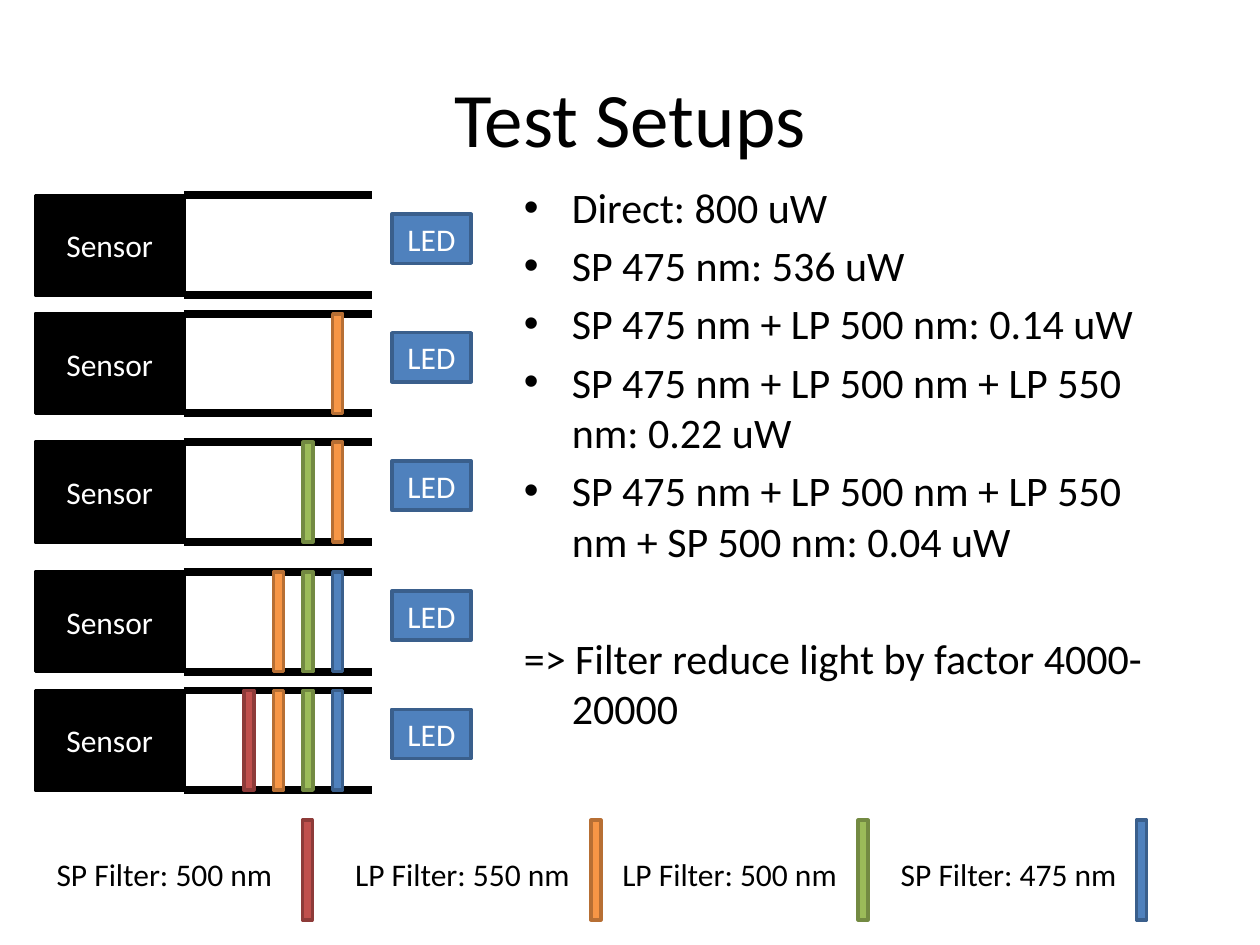
import lxml.etree
import pptx
import pptx.dml.color
import pptx.enum.shapes
import pptx.enum.text
import pptx.oxml.ns
import pptx.util

Inches = pptx.util.Inches
Pt = pptx.util.Pt
ALIGN = pptx.enum.text.PP_ALIGN
ANCHOR = pptx.enum.text.MSO_ANCHOR

TITLE = "Test Setups"
RESULTS = [
    "Direct: 800 uW",
    "SP 475 nm: 536 uW",
    "SP 475 nm + LP 500 nm: 0.14 uW",
    "SP 475 nm + LP 500 nm + LP 550 nm: 0.22 uW",
    "SP 475 nm + LP 500 nm + LP 550 nm + SP 500 nm: 0.04 uW",
]
CONCLUSION = "=> Filter reduce light by factor 4000-20000"

# Top of each setup, and its filters from the LED towards the sensor
SETUPS = [
    (1.55, []),
    (2.49, ["orange"]),
    (3.51, ["orange", "green"]),
    (4.54, ["blue", "green", "orange"]),
    (5.48, ["blue", "green", "orange", "red"]),
]
# Label, label left, filter left, filter colour
LEGEND = [
    ("SP Filter: 500 nm", 0.35, 2.4, "red"),
    ("LP Filter: 550 nm", 2.72, 4.69, "orange"),
    ("LP Filter: 500 nm", 4.84, 6.81, "green"),
    ("SP Filter: 475 nm", 7.05, 9.02, "blue"),
]

THEME = {
    "font": "Calibri",
    "title": 44,
    "body": 24,
    "label": 18,
    "text": "000000",
    "inverse": "FFFFFF",
    # Fill and outline
    "black": ("000000", "000000"),
    "blue": ("4F81BD", "3A5F8C"),
    "orange": ("F79646", "B76F34"),
    "green": ("9BBB59", "738A42"),
    "red": ("C0504D", "8E3B39"),
}

SENSOR_LEFT, SENSOR_WIDTH = 0.28, 1.18
TUBE_LEFT, TUBE_RIGHT, TUBE_HEIGHT = 1.46, 2.95, 0.79
LED_LEFT, LED_WIDTH, LED_HEIGHT, LED_DROP = 3.11, 0.63, 0.39, 0.15
FILTER_LEFT, FILTER_WIDTH, FILTER_STEP = 2.64, 0.08, 0.235
LEGEND_FILTER_TOP, LEGEND_LABEL_TOP = 6.51, 6.74
INDENT = 0.38


def rgb(value):
    return pptx.dml.color.RGBColor.from_string(value)


def write(frame, texts, size=THEME["label"], color=THEME["text"],
          align=ALIGN.LEFT, anchor=ANCHOR.TOP):
    """Fill a text frame with one paragraph per text and return the paragraphs."""
    frame.word_wrap = True
    frame.vertical_anchor = anchor
    paras = []
    for index, text in enumerate(texts):
        para = frame.add_paragraph() if index else frame.paragraphs[0]
        para.alignment = align
        span = para.add_run()
        span.text = text
        span.font.name = THEME["font"]
        span.font.size = Pt(size)
        span.font.color.rgb = rgb(color)
        paras.append(para)
    return paras


def add_text(page, texts, left, top, width, height, **text_format):
    box = page.shapes.add_textbox(*map(Inches, (left, top, width, height)))
    return write(box.text_frame, texts, **text_format)


def add_block(page, left, top, width, height, color, label=None):
    block = page.shapes.add_shape(
        pptx.enum.shapes.MSO_SHAPE.RECTANGLE, *map(Inches, (left, top, width, height)))
    fill, outline = THEME[color]
    block.shadow.inherit = False
    block.fill.solid()
    block.fill.fore_color.rgb = rgb(fill)
    block.line.color.rgb = rgb(outline)
    block.line.width = Pt(2)
    if label:
        write(block.text_frame, [label], color=THEME["inverse"],
              align=ALIGN.CENTER, anchor=ANCHOR.MIDDLE)


def add_wall(page, top):
    wall = page.shapes.add_connector(
        pptx.enum.shapes.MSO_CONNECTOR.STRAIGHT,
        *map(Inches, (TUBE_LEFT, top, TUBE_RIGHT, top)))
    wall.line.color.rgb = rgb(THEME["black"][0])
    wall.line.width = Pt(4.5)
    lxml.etree.SubElement(wall.element.spPr, pptx.oxml.ns.qn("a:effectLst"))


def add_filter(page, left, top, color):
    add_block(page, left, top, FILTER_WIDTH, TUBE_HEIGHT, color)


def add_setup(page, top, filters):
    add_block(page, SENSOR_LEFT, top, SENSOR_WIDTH, TUBE_HEIGHT, "black", "Sensor")
    for wall_top in (top, top + TUBE_HEIGHT):
        add_wall(page, wall_top)
    add_block(page, LED_LEFT, top + LED_DROP, LED_WIDTH, LED_HEIGHT, "blue", "LED")
    for index, color in enumerate(filters):
        add_filter(page, FILTER_LEFT - index * FILTER_STEP, top, color)


def hang(para, bullet):
    """Give a paragraph a hanging indent, with a bullet or without one."""
    props = para._p.get_or_add_pPr()
    props.set("marL", str(Inches(INDENT)))
    props.set("indent", str(-Inches(INDENT)))
    if bullet:
        font = lxml.etree.SubElement(props, pptx.oxml.ns.qn("a:buFont"))
        font.set("typeface", "Arial")
        mark = lxml.etree.SubElement(props, pptx.oxml.ns.qn("a:buChar"))
        mark.set("char", "•")
    else:
        lxml.etree.SubElement(props, pptx.oxml.ns.qn("a:buNone"))


def add_results(page):
    paras = add_text(page, RESULTS + [CONCLUSION], 4.06, 1.39, 5.44, 4.72,
                     size=THEME["body"])
    for para in paras:
        is_conclusion = para is paras[-1]
        para.space_before = Pt(38 if is_conclusion else 4.5)
        hang(para, bullet=not is_conclusion)


def main():
    deck = pptx.Presentation()
    deck.slide_width, deck.slide_height = Inches(10), Inches(7.5)
    page = deck.slides.add_slide(deck.slide_layouts[6])

    add_text(page, [TITLE], 0.5, 0.3, 9, 1.25, size=THEME["title"],
             align=ALIGN.CENTER, anchor=ANCHOR.MIDDLE)
    add_results(page)
    for top, filters in SETUPS:
        add_setup(page, top, filters)
    for label, label_left, filter_left, color in LEGEND:
        add_filter(page, filter_left, LEGEND_FILTER_TOP, color)
        add_text(page, [label], label_left, LEGEND_LABEL_TOP, 2.05, 0.4)

    deck.save("out.pptx")


if __name__ == "__main__":
    main()
